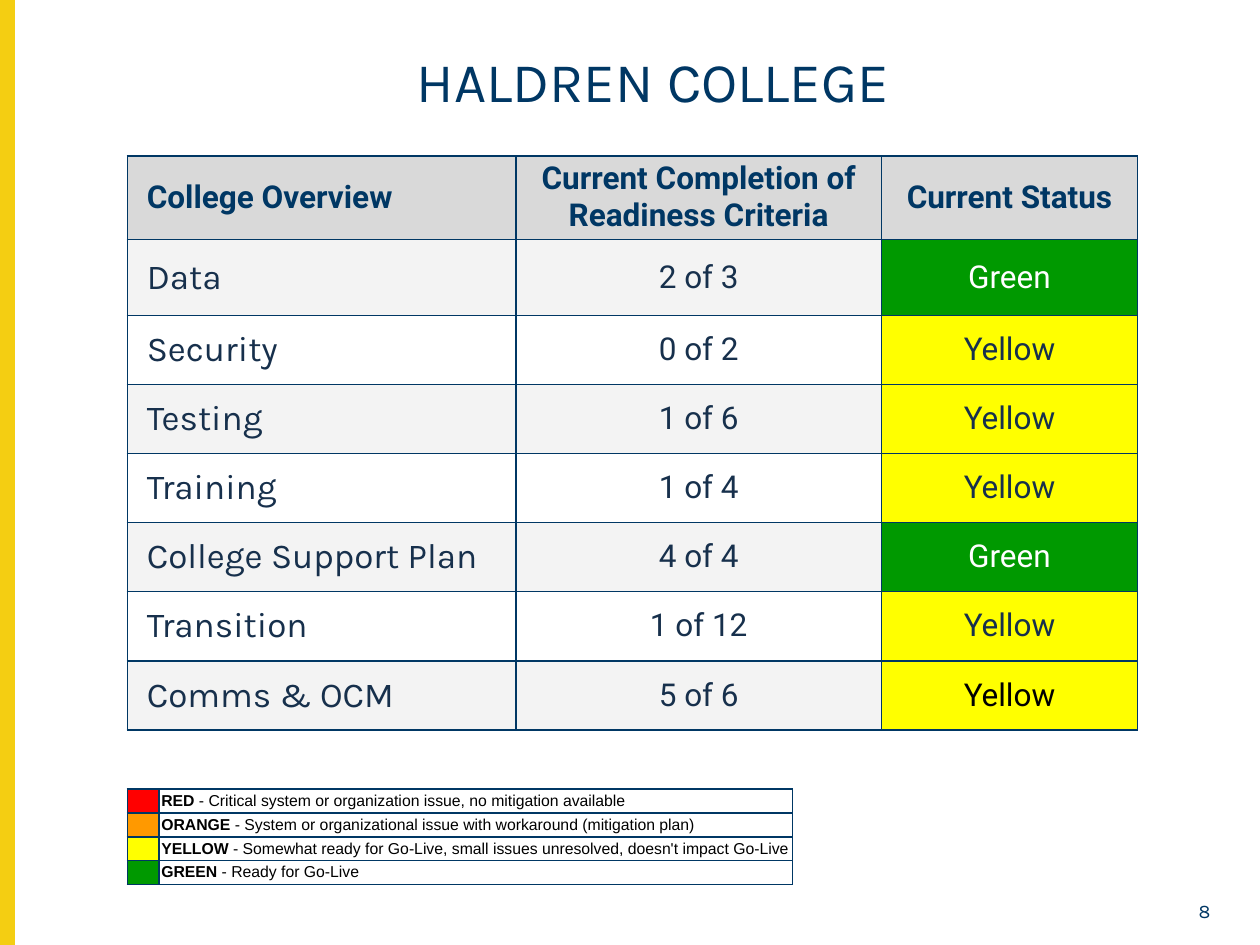
from lxml.etree import SubElement
from pptx import Presentation
from pptx.dml.color import RGBColor
from pptx.enum.shapes import MSO_SHAPE
from pptx.enum.text import MSO_ANCHOR, PP_ALIGN
from pptx.oxml.ns import qn
from pptx.util import Pt

NAVY = RGBColor(0x00, 0x37, 0x64)
INK = RGBColor(0x17, 0x30, 0x4C)
BLACK = RGBColor(0x00, 0x00, 0x00)
WHITE = RGBColor(0xFF, 0xFF, 0xFF)
GOLD = RGBColor(0xF4, 0xCE, 0x12)
HEADER_GREY = RGBColor(0xD9, 0xD9, 0xD9)
BAND_GREY = RGBColor(0xF3, 0xF3, 0xF3)
RED = RGBColor(0xFF, 0x00, 0x00)
ORANGE = RGBColor(0xFF, 0x99, 0x00)
YELLOW = RGBColor(0xFF, 0xFF, 0x00)
GREEN = RGBColor(0x00, 0x99, 0x00)

TITLE = "HALDREN COLLEGE"
HEADERS = ["College Overview", "Current Completion of Readiness Criteria", "Current Status"]
# area, criteria completed, status, status text colour
AREAS = [
    ("Data", "2 of 3", "Green", WHITE),
    ("Security", "0 of 2", "Yellow", INK),
    ("Testing", "1 of 6", "Yellow", INK),
    ("Training", "1 of 4", "Yellow", INK),
    ("College Support Plan", "4 of 4", "Green", WHITE),
    ("Transition", "1 of 12", "Yellow", INK),
    ("Comms & OCM", "5 of 6", "Yellow", BLACK),
]
STATUS_FILLS = {"Green": GREEN, "Yellow": YELLOW}
LEGEND = [
    (RED, "RED", "Critical system or organization issue, no mitigation available"),
    (ORANGE, "ORANGE", "System or organizational issue with workaround (mitigation plan)"),
    (YELLOW, "YELLOW", "Somewhat ready for Go-Live, small issues unresolved, doesn't impact Go-Live"),
    (GREEN, "GREEN", "Ready for Go-Live"),
]
PAGE_NUMBER = "8"

LEFT = 72.8
STATUS_COLS = [222, 209, 146.2]
STATUS_ROWS = [48, 43.2] + [39.5] * (len(AREAS) - 1)
LEGEND_COLS = [18, 362]
LEGEND_ROWS = [13.6] * len(LEGEND)
STATUS_MARGINS = (2.2, 1.4, 2.2, 1.4)
LEGEND_MARGINS = (1.4, 0, 0, 0)
FIRST_INDENT = 8.9


def add_text(tf, text, size=18, font="Roboto", color=INK, bold=False,
             align=PP_ALIGN.LEFT, indent=0):
    """Append a run to the first paragraph of a text frame."""
    p = tf.paragraphs[0]
    p.alignment = align
    if indent:
        p._p.get_or_add_pPr().set("indent", str(Pt(indent)))
    r = p.add_run()
    r.text = text
    r.font.size = Pt(size)
    r.font.name = font
    r.font.bold = bold
    r.font.color.rgb = color
    return p


def add_borders(cell):
    tc_pr = cell._tc.get_or_add_tcPr()
    for i, side in enumerate(("lnL", "lnR", "lnT", "lnB")):
        ln = tc_pr.makeelement(qn(f"a:{side}"), {"w": str(Pt(1))})
        fill = SubElement(ln, qn("a:solidFill"))
        SubElement(fill, qn("a:srgbClr"), val=str(NAVY))
        tc_pr.insert(i, ln)


def format_cell(cell, fill, margins):
    cell.fill.solid()
    cell.fill.fore_color.rgb = fill
    cell.vertical_anchor = MSO_ANCHOR.MIDDLE
    (cell.margin_left, cell.margin_top,
     cell.margin_right, cell.margin_bottom) = map(Pt, margins)
    add_borders(cell)
    return cell.text_frame


def add_plain_table(slide, top, cols, rows):
    frame = slide.shapes.add_table(len(rows), len(cols), Pt(LEFT), Pt(top),
                                   Pt(sum(cols)), Pt(sum(rows)))
    table = frame.table
    table.first_row = table.horz_banding = False
    for col, width in zip(table.columns, cols):
        col.width = Pt(width)
    for row, height in zip(table.rows, rows):
        row.height = Pt(height)
    return table


def add_status_table(slide):
    table = add_plain_table(slide, 89, STATUS_COLS, STATUS_ROWS)
    first = dict(align=PP_ALIGN.LEFT, indent=FIRST_INDENT)
    other = dict(align=PP_ALIGN.CENTER)
    for c, header in enumerate(HEADERS):
        tf = format_cell(table.cell(0, c), HEADER_GREY, STATUS_MARGINS)
        add_text(tf, header, color=NAVY, bold=True, **(other if c else first))
    for i, (area, done, status, status_color) in enumerate(AREAS, start=1):
        band = BAND_GREY if i % 2 else WHITE
        fills = (band, band, STATUS_FILLS[status])
        area_tf, done_tf, status_tf = [
            format_cell(table.cell(i, c), fill, STATUS_MARGINS)
            for c, fill in enumerate(fills)]
        add_text(area_tf, area, size=20, font="Karla", **first)
        add_text(done_tf, done, **other)
        add_text(status_tf, status, color=status_color, **other)


def add_legend(slide):
    table = add_plain_table(slide, 451, LEGEND_COLS, LEGEND_ROWS)
    style = dict(size=9, font="Arial", color=BLACK)
    for i, (color, name, meaning) in enumerate(LEGEND):
        swatch = format_cell(table.cell(i, 0), color, LEGEND_MARGINS)
        # a small end mark keeps the empty cell from stretching its row
        SubElement(swatch.paragraphs[0]._p, qn("a:endParaRPr"), sz="900")
        tf = format_cell(table.cell(i, 1), WHITE, LEGEND_MARGINS)
        add_text(tf, name, bold=True, **style)
        add_text(tf, f" - {meaning}", **style)


def main():
    prs = Presentation()
    prs.slide_width, prs.slide_height = Pt(720), Pt(540)
    slide = prs.slides.add_slide(prs.slide_layouts[5])

    bar = slide.shapes.add_shape(MSO_SHAPE.RECTANGLE, 0, 0, Pt(8), Pt(540))
    bar.shadow.inherit = False
    bar.fill.solid()
    bar.fill.fore_color.rgb = bar.line.color.rgb = GOLD
    bar.line.width = Pt(1)

    title = slide.shapes.title
    title.left, title.top, title.width, title.height = Pt(LEFT), Pt(27.4), Pt(601), Pt(48)
    title.text_frame.vertical_anchor = MSO_ANCHOR.TOP
    p = add_text(title.text_frame, TITLE, size=32, font="Karla", color=NAVY,
                 align=PP_ALIGN.CENTER)
    p.line_spacing = 0.9

    add_status_table(slide)
    add_legend(slide)

    number = slide.shapes.add_textbox(Pt(662), Pt(511), Pt(36.7), Pt(18.7))
    number.text_frame.word_wrap = True
    number.text_frame.vertical_anchor = MSO_ANCHOR.MIDDLE
    add_text(number.text_frame, PAGE_NUMBER, size=11, font="Karla", color=NAVY,
             align=PP_ALIGN.RIGHT)

    prs.save("out.pptx")


if __name__ == "__main__":
    main()
